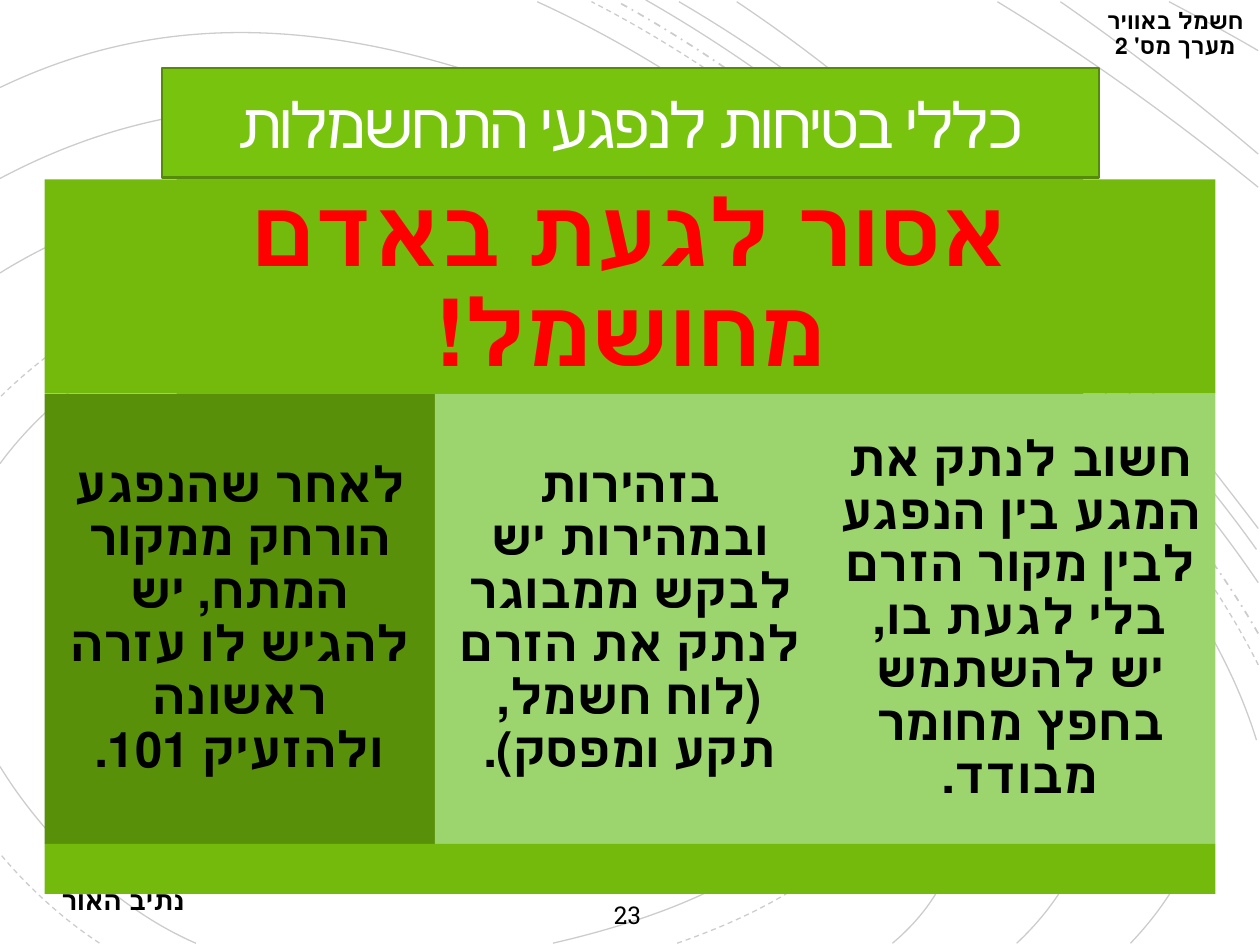
from dataclasses import dataclass

from lxml.etree import SubElement
from pptx import Presentation
from pptx.dml.color import RGBColor
from pptx.enum.dml import MSO_LINE as Dash
from pptx.enum.shapes import MSO_SHAPE as Preset
from pptx.enum.text import MSO_ANCHOR as Anchor, MSO_AUTO_SIZE as AutoSize, PP_ALIGN as Align
from pptx.oxml.ns import qn
from pptx.util import Pt


@dataclass
class Arc:
    """Bezier chain: a start point, then three points per segment."""
    points: list[tuple[float, float]]
    dash: Dash = Dash.SOLID
    width: float = 0.75


@dataclass
class Box:
    left: float
    top: float
    width: float
    height: float

    def lengths(self) -> list[int]:
        return [Pt(value) for value in (self.left, self.top, self.width, self.height)]


@dataclass
class Panel:
    box: Box
    fill: str
    text: str = ""
    size: float = 28
    color: str = "000000"


@dataclass
class Label:
    box: Box
    text: str
    size: float
    bold: bool = True
    align: Align = Align.CENTER
    line_spacing: float | None = None


ARCS = [
    Arc([(510, 539), (617, 449), (480, 294), (411, 227), (347, 166), (266, 118),
         (176, 110), (118, 105), (53, 123), (0, 156)]),
    Arc([(0, 438), (27, 482), (70, 521), (112, 539)]),
    Arc([(316, 539), (390, 522), (513, 480), (473, 380), (436, 287), (323, 200),
         (225, 179), (143, 160), (50, 197), (0, 265)]),
    Arc([(1, 489), (17, 508), (37, 526), (57, 539)], Dash.DASH),
    Arc([(387, 539), (430, 524), (480, 500), (504, 459), (532, 408), (501, 356), (468, 317),
         (400, 237), (305, 163), (199, 151), (126, 143), (53, 175), (0, 227)], Dash.DASH),
    Arc([(581, 539), (693, 434), (563, 297), (482, 220), (406, 148), (314, 86),
         (210, 67), (136, 53), (64, 68), (0, 102)]),
    Arc([(646, 539), (752, 428), (647, 303), (559, 221), (467, 136), (360, 63),
         (238, 32), (147, 9), (71, 16), (0, 50)]),
    Arc([(718, 423), (693, 341), (622, 263), (572, 207), (498, 123), (410, 48), (307, 1)]),
    Arc([(719, 380), (688, 318), (638, 261), (599, 217), (525, 131), (439, 53), (338, 1)],
        Dash.DASH),
    Arc([(719, 362), (688, 308), (644, 258), (610, 217), (536, 132), (451, 55), (353, 1)],
        Dash.DASH_DOT, 1),
    Arc([(719, 333), (692, 293), (660, 256), (632, 225), (557, 137), (469, 57), (369, 0)]),
    Arc([(718, 314), (696, 283), (672, 255), (649, 229), (575, 141), (489, 60), (388, 1)]),
    Arc([(719, 302), (700, 277), (681, 253), (664, 231), (594, 144), (514, 63), (421, 1)]),
    Arc([(719, 107), (671, 68), (621, 32), (570, 1)]),
    Arc([(719, 88), (680, 55), (642, 26), (606, 1)]),
    Arc([(668, 1), (685, 10), (702, 19), (719, 29)]),
]

GREEN, BAND_GREEN, DARK_GREEN, LIGHT_GREEN = "78C30D", "73BA0C", "59900A", "9CD56E"
BAND_LEFT, BAND_WIDTH = 25.5, 669
COLUMN_TOP, COLUMN_HEIGHT = 225.2, 257
RULES = [
    ("לאחר שהנפגע הורחק ממקור המתח, יש להגיש לו עזרה ראשונה ולהזעיק 101.", DARK_GREEN),
    ("בזהירות ובמהירות יש לבקש ממבוגר לנתק את הזרם (לוח חשמל, תקע ומפסק).", LIGHT_GREEN),
    ("חשוב לנתק את המגע בין הנפגע לבין מקור הזרם בלי לגעת בו, יש להשתמש בחפץ מחומר מבודד.",
     LIGHT_GREEN),
]
COLUMN_WIDTH = BAND_WIDTH / len(RULES)

PANELS = [
    Panel(Box(101, 92, 518, 58), GREEN),
    Panel(Box(101, 155.5, 518, 266), GREEN),
    Panel(Box(BAND_LEFT, 102.5, BAND_WIDTH, 122.5), BAND_GREEN,
          "אסור לגעת באדם מחושמל!", 53, "FF0000"),
    *[Panel(Box(BAND_LEFT + index * COLUMN_WIDTH, COLUMN_TOP, COLUMN_WIDTH, COLUMN_HEIGHT),
            fill, text) for index, (text, fill) in enumerate(RULES)],
    Panel(Box(BAND_LEFT, COLUMN_TOP + COLUMN_HEIGHT, BAND_WIDTH, 28.6), BAND_GREEN),
]

LABELS = [
    Label(Box(294, 511, 129, 24.5), "23", 14, bold=False),
    Label(Box(28, 502, 111, 25), "נתיב האור", 15, align=Align.LEFT),
    Label(Box(623.5, 2, 96, 35), "חשמל באוויר\vמערך מס' 2", 13, line_spacing=14),
]


def rgb(color: str) -> RGBColor:
    return RGBColor.from_string(color)


def style_font(paragraph, name: str, size: float, color: str, bold: bool) -> None:
    font = paragraph.font
    font.name, font.size, font.bold = name, Pt(size), bold
    font.color.rgb = rgb(color)


def draw_arc(slide, arc: Arc) -> None:
    start, *others = [(Pt(x), Pt(y)) for x, y in arc.points]
    builder = slide.shapes.build_freeform(*start)
    builder.add_line_segments(others, close=False)
    shape = builder.convert_to_shape()
    shape.shadow.inherit = False
    shape.fill.background()
    shape.line.width = Pt(arc.width)
    shape.line.dash_style = arc.dash
    shape.line.color.rgb = rgb("000000")
    color = shape.line._ln.find(".//" + qn("a:srgbClr"))
    SubElement(color, qn("a:alpha"), val="20000")
    # Every three straight segments become one cubic curve
    outline = shape._element.find(".//" + qn("a:path"))
    segments = outline.findall(qn("a:lnTo"))
    for first in range(0, len(segments), 3):
        curve = SubElement(outline, qn("a:cubicBezTo"))
        for segment in segments[first:first + 3]:
            curve.append(segment[0])
            outline.remove(segment)


def draw_panel(slide, panel: Panel) -> None:
    shape = slide.shapes.add_shape(Preset.RECTANGLE, *panel.box.lengths())
    shape.shadow.inherit = False
    shape.fill.solid()
    shape.fill.fore_color.rgb = rgb(panel.fill)
    shape.line.fill.background()
    if not panel.text:
        return
    frame = shape.text_frame
    frame.word_wrap = True
    frame.vertical_anchor = Anchor.MIDDLE
    inset = Pt(panel.size * 0.3)
    frame.margin_left = frame.margin_right = frame.margin_top = frame.margin_bottom = inset
    paragraph = frame.paragraphs[0]
    paragraph.text = panel.text
    paragraph.alignment = Align.CENTER
    paragraph.line_spacing = 0.9
    paragraph._p.get_or_add_pPr().set("rtl", "1")
    style_font(paragraph, "Calibri", panel.size, panel.color, True)


def draw_title(slide, box: Box, text: str) -> None:
    title = slide.shapes.title
    title.left, title.top, title.width, title.height = box.lengths()
    title.fill.solid()
    title.fill.fore_color.rgb = rgb(GREEN)
    title.line.color.rgb = rgb("558A0A")
    title.line.width = Pt(1.25)
    frame = title.text_frame
    frame.auto_size = AutoSize.NONE
    frame.vertical_anchor = Anchor.MIDDLE
    paragraph = frame.paragraphs[0]
    paragraph.text = text
    paragraph.alignment = Align.CENTER
    style_font(paragraph, "Calibri", 36, "FFFEFF", False)
    paragraph._p.pPr.find(qn("a:defRPr")).set("spc", "-110")
    # Bring the title in front of the panels
    slide.shapes._spTree.append(title._element)


def draw_label(slide, label: Label) -> None:
    frame = slide.shapes.add_textbox(*label.box.lengths()).text_frame
    frame.word_wrap = True
    frame.auto_size = AutoSize.SHAPE_TO_FIT_TEXT
    paragraph = frame.paragraphs[0]
    paragraph.text = label.text
    paragraph.alignment = label.align
    if label.line_spacing:
        paragraph.line_spacing = Pt(label.line_spacing)
    style_font(paragraph, "Roboto Slab", label.size, "000000", label.bold)


def main() -> None:
    presentation = Presentation()
    presentation.slide_width, presentation.slide_height = Pt(720), Pt(540)
    slide = presentation.slides.add_slide(presentation.slide_layouts[5])
    # Background arcs
    for arc in ARCS:
        draw_arc(slide, arc)
    # Safety rules
    for panel in PANELS:
        draw_panel(slide, panel)
    draw_title(slide, Box(92.5, 39, 535.5, 62.5), "כללי בטיחות לנפגעי התחשמלות")
    # Page number and captions
    for label in LABELS:
        draw_label(slide, label)
    presentation.save("out.pptx")


if __name__ == "__main__":
    main()
